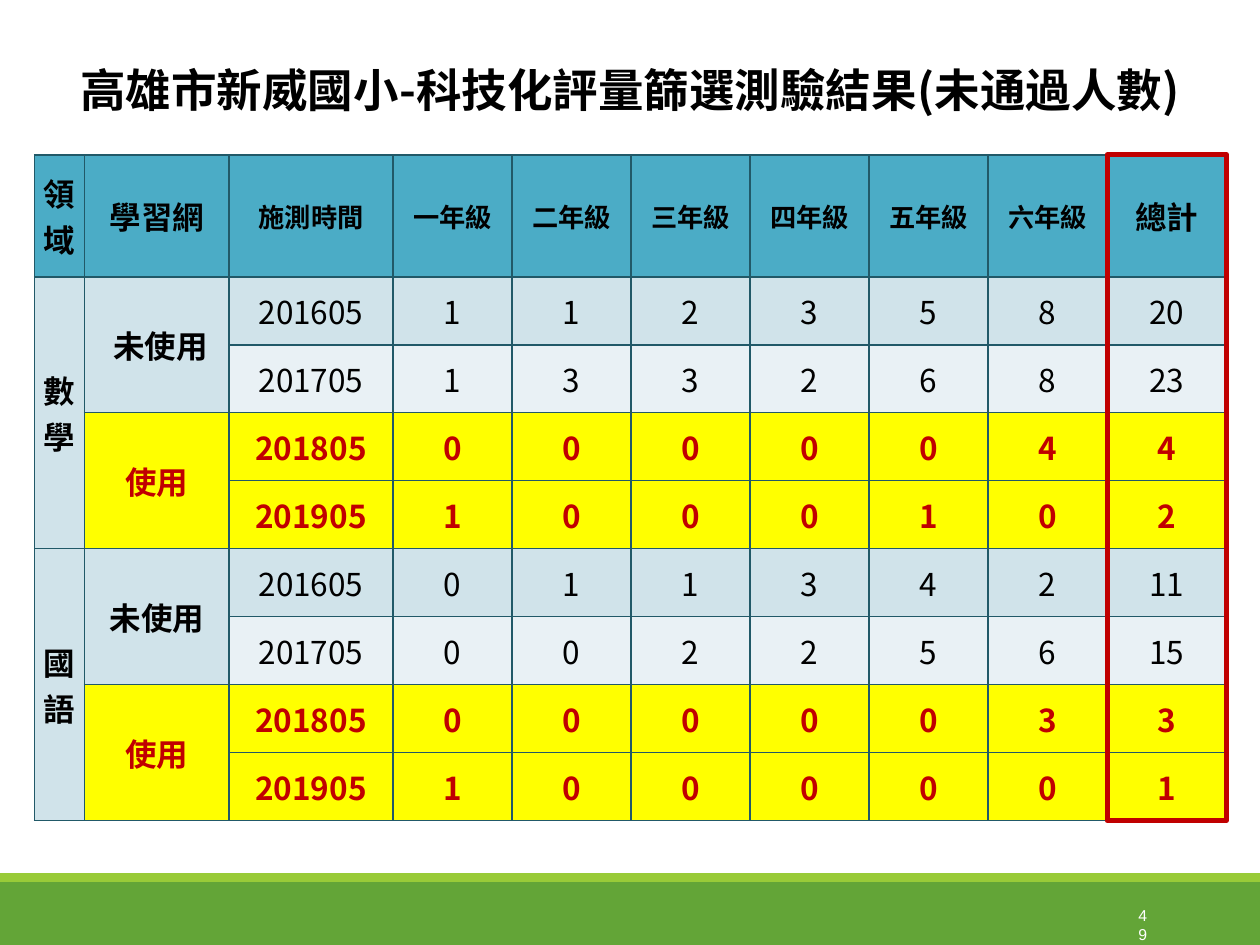
import dataclasses

import lxml.etree
import pptx
import pptx.dml.color
import pptx.enum.shapes
import pptx.enum.text
import pptx.oxml.ns
import pptx.util

Cm = pptx.util.Cm
Pt = pptx.util.Pt
ALIGN = pptx.enum.text.PP_ALIGN
qn = pptx.oxml.ns.qn


@dataclasses.dataclass(frozen=True)
class Theme:
    font: str = "Noto Sans CJK SC"
    plain: str = "Arial"
    black: str = "000000"
    white: str = "FFFFFF"
    red: str = "C00000"
    yellow: str = "FFFF00"
    header: str = "4BACC6"
    dark: str = "D0E3EA"
    light: str = "E9F1F5"
    border: str = "215968"
    green: str = "63A537"
    lime: str = "99CB38"
    title: int = 26
    body: int = 18
    label: int = 15
    small: int = 9


def tint(code):
    return pptx.dml.color.RGBColor.from_string(code)


class Deck:
    def __init__(self, theme):
        self.theme = theme
        self.show = pptx.Presentation()
        self.show.slide_width = Cm(25.4)
        self.show.slide_height = Cm(19.05)
        self.slide = self.show.slides.add_slide(self.show.slide_layouts[6])

    def label(self, frame, text, size, color, bold=False, font=None, align=ALIGN.CENTER):
        frame.text = text
        frame.word_wrap = True
        line = frame.paragraphs[0]
        line.alignment = align
        for run in line.runs:
            run.font.size = Pt(size)
            run.font.bold = bold
            run.font.name = font or self.theme.font
            run.font.color.rgb = tint(color)
            east = lxml.etree.SubElement(run.font._element, qn("a:ea"))
            east.set("typeface", run.font.name)

    def text(self, left, top, width, height, text, **style):
        box = self.slide.shapes.add_textbox(Cm(left), Cm(top), Cm(width), Cm(height))
        self.label(box.text_frame, text, **style)

    def rect(self, left, top, width, height, fill=None, line=None, weight=3):
        shape = self.slide.shapes.add_shape(
            pptx.enum.shapes.MSO_SHAPE.RECTANGLE,
            Cm(left), Cm(top), Cm(width), Cm(height))
        shape.shadow.inherit = False
        if fill:
            shape.fill.solid()
            shape.fill.fore_color.rgb = tint(fill)
        else:
            shape.fill.background()
        if line:
            shape.line.color.rgb = tint(line)
            shape.line.width = Pt(weight)
        else:
            shape.line.fill.background()

    def table(self, left, top, widths, heights):
        frame = self.slide.shapes.add_table(
            len(heights), len(widths), Cm(left), Cm(top),
            Cm(sum(widths)), Cm(sum(heights)))
        grid = frame.table
        for col, width in zip(grid.columns, widths):
            col.width = Cm(width)
        for row, height in zip(grid.rows, heights):
            row.height = Cm(height)
        return grid

    def cell(self, cell, text, fill, size, color, bold):
        cell.margin_left = cell.margin_right = Cm(0.18)
        cell.margin_top = cell.margin_bottom = Cm(0.1)
        cell.vertical_anchor = pptx.enum.text.MSO_ANCHOR.MIDDLE
        self.label(cell.text_frame, text, size, color, bold)
        props = cell._tc.get_or_add_tcPr()
        for side in ("a:lnL", "a:lnR", "a:lnT", "a:lnB"):
            edge = lxml.etree.SubElement(props, qn(side), w=str(Pt(1)))
            solid = lxml.etree.SubElement(edge, qn("a:solidFill"))
            lxml.etree.SubElement(solid, qn("a:srgbClr"), val=self.theme.border)
        cell.fill.solid()
        cell.fill.fore_color.rgb = tint(fill)


HEADS = ["領域", "學習網", "施測時間", "一年級", "二年級", "三年級",
         "四年級", "五年級", "六年級", "總計"]
ROWS = [
    ["數學", " 未使用", "201605", 1, 1, 2, 3, 5, 8, 20],
    ["", "", "201705", 1, 3, 3, 2, 6, 8, 23],
    ["", "使用", "201805", 0, 0, 0, 0, 0, 4, 4],
    ["", "", "201905", 1, 0, 0, 0, 1, 0, 2],
    ["國語", "未使用", "201605", 0, 1, 1, 3, 4, 2, 11],
    ["", "", "201705", 0, 0, 2, 2, 5, 6, 15],
    ["", "使用", "201805", 0, 0, 0, 0, 0, 3, 3],
    ["", "", "201905", 1, 0, 0, 0, 0, 0, 1],
]
LEFT, TOP = 0.7, 3.12
WIDTHS = [1, 2.92, 3.3] + [2.4] * 7
HEIGHTS = [2.46] + [1.37] * 8


def main():
    theme = Theme()
    deck = Deck(theme)
    deck.rect(0, 17.78, 25.4, 1.27, fill=theme.green)
    deck.rect(0, 17.6, 25.4, 0.18, fill=theme.lime)

    grid = deck.table(LEFT, TOP, WIDTHS, HEIGHTS)
    for col, head in enumerate(HEADS):
        size = theme.label if 2 <= col <= 8 else theme.body
        deck.cell(grid.cell(0, col), head, theme.header, size, theme.black, True)
    bands = [theme.dark, theme.light, theme.yellow, theme.yellow]
    for row, items in enumerate(ROWS):
        for col, item in enumerate(items):
            used = row % 4 >= 2 and col > 0
            fill = bands[row % 4] if col > 1 or used else theme.dark
            color = theme.red if used else theme.black
            deck.cell(grid.cell(row + 1, col), str(item), fill, theme.body,
                      color, used or col < 2)
    for col, span in ((0, 4), (1, 2)):
        for row in range(1, 9, span):
            grid.cell(row, col).merge(grid.cell(row + span - 1, col))

    deck.text(0, 1.12, 25.4, 1.37, "高雄市新威國小-科技化評量篩選測驗結果(未通過人數)",
              size=theme.title, color=theme.black, bold=True)
    deck.rect(LEFT + sum(WIDTHS[:-1]), TOP, WIDTHS[-1], sum(HEIGHTS), line=theme.red)
    deck.text(22.7, 18.14, 0.64, 0.64, "49", size=theme.small, color=theme.white,
              font=theme.plain, align=ALIGN.RIGHT)
    deck.show.save("out.pptx")


if __name__ == "__main__":
    main()
